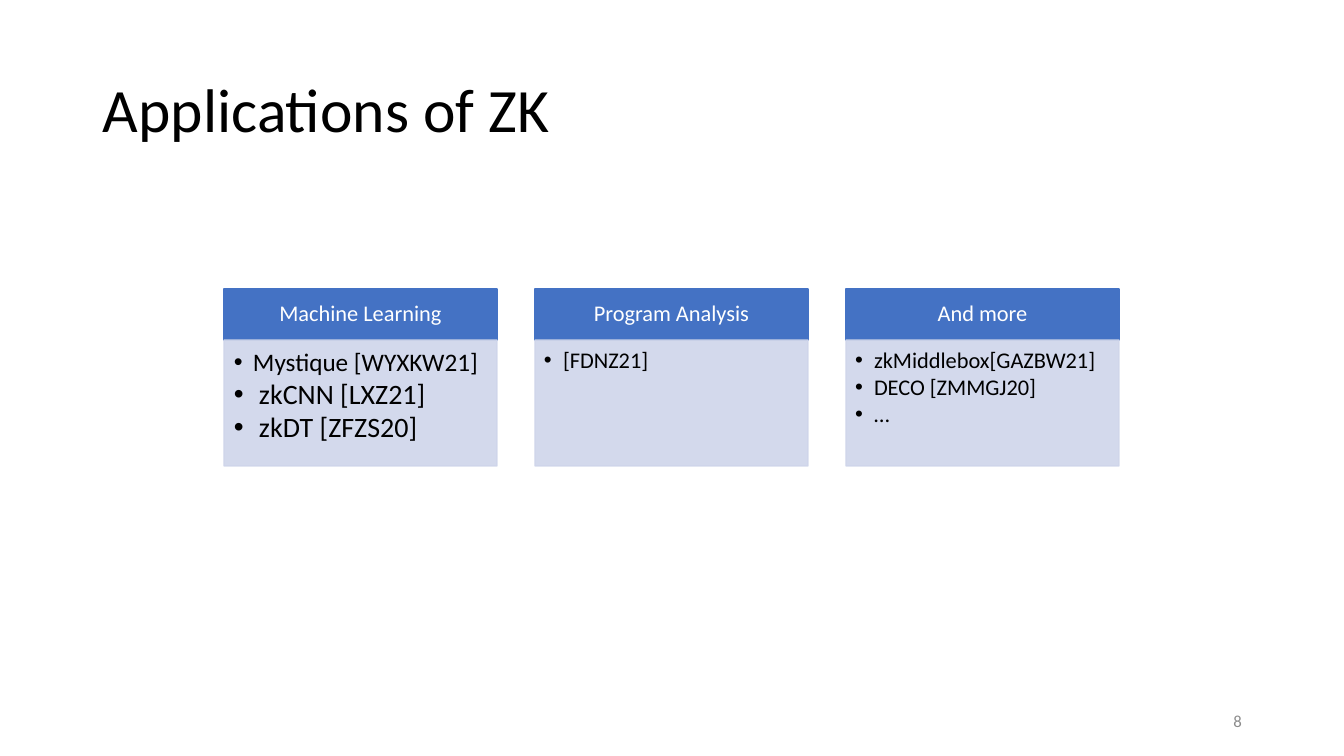
from dataclasses import dataclass

from lxml import etree
from pptx import Presentation
from pptx.dml.color import RGBColor
from pptx.enum.shapes import MSO_SHAPE
from pptx.enum.text import MSO_ANCHOR, MSO_AUTO_SIZE, PP_ALIGN
from pptx.oxml.ns import qn
from pptx.util import Pt

RECTANGLE = MSO_SHAPE.RECTANGLE
TOP, MIDDLE = MSO_ANCHOR.TOP, MSO_ANCHOR.MIDDLE
LEFT, CENTER, RIGHT = PP_ALIGN.LEFT, PP_ALIGN.CENTER, PP_ALIGN.RIGHT
NO_FIT = MSO_AUTO_SIZE.NONE
TITLE_ONLY = 5
EMU_PER_PX = 914400 / 100.8


@dataclass(frozen=True)
class Theme:
    font: str = "Calibri"
    ink: str = "000000"
    paper: str = "FFFFFF"
    muted: str = "8C8C8C"
    header: str = "4472C4"
    panel: str = "CFD5EA"
    panel_alpha: int = 90
    title_size: int = 44
    header_size: int = 16
    number_size: int = 12


THEME = Theme()

# Each column: heading, insets of its panel, bullets as (text, size, indent in px)
COLUMNS = [
    ("Machine Learning", (10, 10, 14, 16), [
        ("Mystique [WYXKW21]", 18, 19),
        ("zkCNN [LXZ21]", 20, 25),
        ("zkDT [ZFZS20]", 20, 25),
    ]),
    ("Program Analysis", (9, 9, 12, 14), [("[FDNZ21]", 16, 19)]),
    ("And more", (9, 9, 12, 14), [
        ("zkMiddlebox[GAZBW21]", 16, 19),
        ("DECO [ZMMGJ20]", 16, 19),
        ("…", 16, 19),
    ]),
]


def px(length):
    return round(length * EMU_PER_PX)


def apply_format(target, values):
    for name, value in values.items():
        setattr(target, name, value)


def set_frame(frame, anchor, insets=(10, 5, 10, 5)):
    left, top, right, bottom = map(px, insets)
    apply_format(frame, {
        "word_wrap": True, "auto_size": NO_FIT, "vertical_anchor": anchor,
        "margin_left": left, "margin_top": top,
        "margin_right": right, "margin_bottom": bottom,
    })


def write(para, text, size, color, alignment, spacing=0.9, after=0):
    apply_format(para, {
        "alignment": alignment, "line_spacing": spacing,
        "space_before": Pt(0), "space_after": Pt(after),
    })
    span = para.add_run()
    span.text = text
    apply_format(span.font, {"name": THEME.font, "size": Pt(size)})
    span.font.color.rgb = RGBColor.from_string(color)


def add_bullet(para, indent):
    properties = para._p.get_or_add_pPr()
    properties.set("marL", str(px(indent)))
    properties.set("indent", str(-px(indent)))
    etree.SubElement(properties, qn("a:buFont")).set("typeface", "Arial")
    etree.SubElement(properties, qn("a:buChar")).set("char", "•")


def add_block(page, box, color, alpha=100):
    block = page.shapes.add_shape(RECTANGLE, *map(px, box))
    block.shadow.inherit = False
    block.line.width = Pt(1)
    for fill in (block.fill, block.line.fill):
        fill.solid()
        fill.fore_color.rgb = RGBColor.from_string(color)
    if alpha < 100:
        for tone in block._element.spPr.iter(qn("a:srgbClr")):
            etree.SubElement(tone, qn("a:alpha")).set("val", str(alpha * 1000))
    return block


def add_title(page, box, text):
    title = page.shapes.title
    left, top, width, height = map(px, box)
    apply_format(title, {"left": left, "top": top, "width": width, "height": height})
    set_frame(title.text_frame, MIDDLE)
    write(title.text_frame.paragraphs[0], text, THEME.title_size, THEME.ink, LEFT)


def add_page_number(page, box, number):
    frame = page.shapes.add_textbox(*map(px, box)).text_frame
    set_frame(frame, MIDDLE)
    write(frame.paragraphs[0], str(number), THEME.number_size, THEME.muted, RIGHT, 1.0)


def add_column(page, box, heading, insets, bullets):
    left, top, width, height = box
    header_height = 51

    # Heading bar
    header = add_block(page, (left, top, width, header_height), THEME.header)
    set_frame(header.text_frame, MIDDLE, (12, 7, 12, 7))
    write(header.text_frame.paragraphs[0], heading, THEME.header_size, THEME.paper, CENTER)

    # Panel of bullets
    panel_box = (left, top + header_height, width, height - header_height)
    frame = add_block(page, panel_box, THEME.panel, THEME.panel_alpha).text_frame
    set_frame(frame, TOP, insets)
    for index, (text, size, indent) in enumerate(bullets):
        para = frame.add_paragraph() if index else frame.paragraphs[0]
        write(para, text, size, THEME.ink, LEFT, after=2)
        add_bullet(para, indent)


def add_columns(page, box, columns, gap):
    left, top, width, height = box
    column_width = (width - gap * (len(columns) - 1)) // len(columns)
    for index, column in enumerate(columns):
        column_left = left + index * (column_width + gap)
        add_column(page, (column_left, top, column_width, height), *column)


def main():
    deck = Presentation()
    deck.slide_width, deck.slide_height = px(1344), px(756)
    page = deck.slides.add_slide(deck.slide_layouts[TITLE_ONLY])
    add_title(page, (93, 40, 1159, 146), "Applications of ZK")
    add_columns(page, (224, 289, 895, 177), COLUMNS, gap=38)
    add_page_number(page, (950, 701, 302, 40), 8)
    deck.save("out.pptx")


if __name__ == "__main__":
    main()
